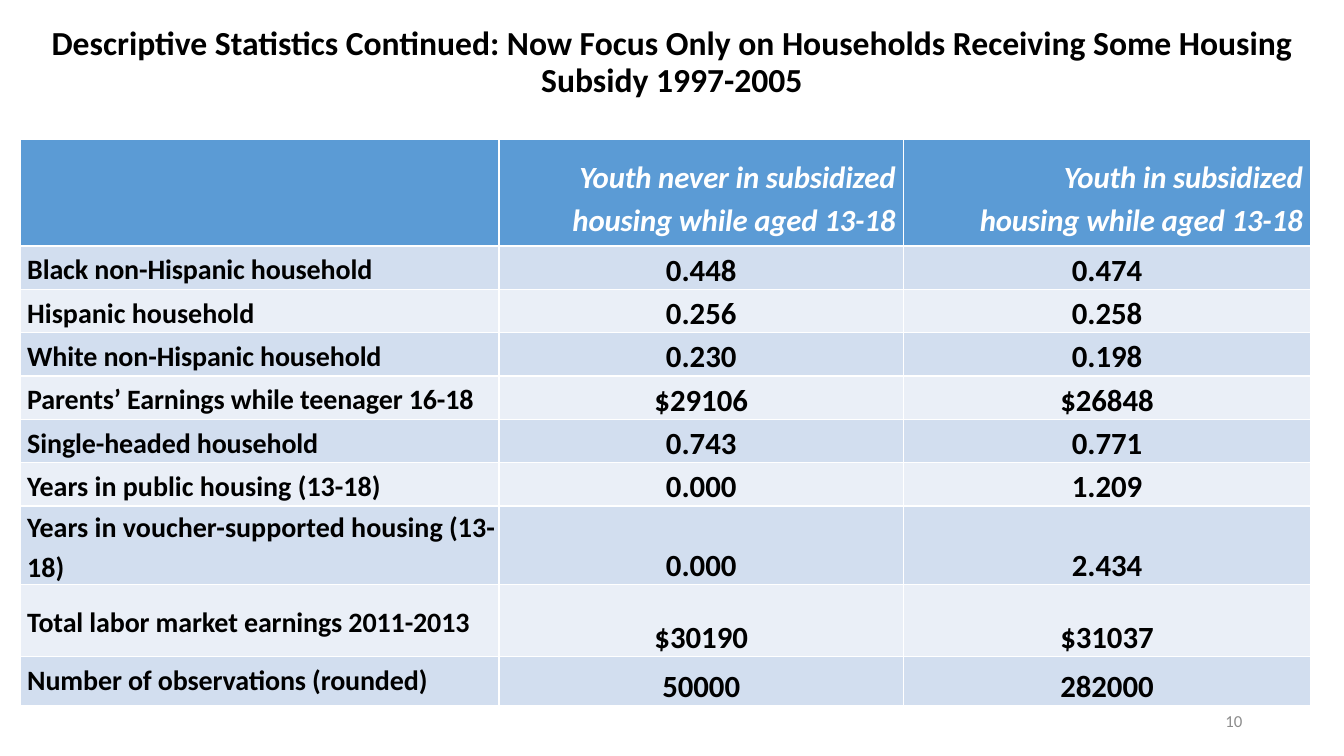
from pptx import Presentation
from pptx.dml.color import RGBColor
from pptx.enum.text import MSO_ANCHOR, PP_ALIGN
from pptx.util import Inches, Pt

TITLE = ("Descriptive Statistics Continued: Now Focus Only on Households "
         "Receiving Some Housing Subsidy 1997-2005")
HEADERS = ("", "Youth never in subsidized housing while aged 13-18",
           "Youth in subsidized housing while aged 13-18")
# label, never subsidized, subsidized, row height, label letter spacing, label line spacing
ROWS = [
    ("Black non-Hispanic household", "0.448", "0.474", 0.43, -10, 1.15),
    ("Hispanic household", "0.256", "0.258", 0.43, 0, 1.15),
    ("White non-Hispanic household", "0.230", "0.198", 0.43, -10, 1.15),
    ("Parents’ Earnings while teenager 16-18", "$29106", "$26848", 0.43, -10, 1.15),
    ("Single-headed household", "0.743", "0.771", 0.43, -10, 1.15),
    ("Years in public housing (13-18)", "0.000", "1.209", 0.43, 0, 1.15),
    ("Years in voucher-supported housing (13-18)", "0.000", "2.434", 0.71, 0, 1.15),
    ("Total labor market earnings 2011-2013", "$30190", "$31037", 0.71, -10, 1.15),
    ("Number of observations (rounded)", "50000", "282000", 0.49, -10, 0.99),
]
PAGE_NUMBER = "10"

FONT = "Calibri"
BLACK = RGBColor(0x00, 0x00, 0x00)
WHITE = RGBColor(0xFF, 0xFF, 0xFF)
GRAY = RGBColor(0x8C, 0x8C, 0x8C)
HEADER_BLUE = RGBColor(0x5B, 0x9B, 0xD5)
BANDS = (RGBColor(0xD2, 0xDE, 0xEF), RGBColor(0xEA, 0xEF, 0xF7))

COLUMN_WIDTHS = (4.75, 4.01, 4.04)
HEADER_HEIGHT = 1.06
TABLE_LEFT, TABLE_TOP = 0.2, 1.38


def write(text_frame, text, size, color, align, bold=True, italic=False, spacing=0):
    """Fill a text frame with one formatted paragraph and return the paragraph."""
    text_frame.text = text
    paragraph = text_frame.paragraphs[0]
    paragraph.alignment = align
    for run in paragraph.runs:
        run.font.name, run.font.size = FONT, Pt(size)
        run.font.bold, run.font.italic = bold, italic
        run.font.color.rgb = color
        if spacing:
            run.font._element.set("spc", str(spacing))
    return paragraph


def indent(paragraph, left, first_line=0):
    properties = paragraph._p.get_or_add_pPr()
    properties.set("marL", str(Inches(left)))
    properties.set("indent", str(Inches(first_line)))


def prepare(cell, color, anchor):
    cell.fill.solid()
    cell.fill.fore_color.rgb = color
    cell.vertical_anchor = anchor
    cell.margin_left = cell.margin_right = cell.margin_top = cell.margin_bottom = 0


def add_statistics_table(slide):
    heights = [HEADER_HEIGHT] + [row[3] for row in ROWS]
    table = slide.shapes.add_table(
        len(heights), len(COLUMN_WIDTHS), Inches(TABLE_LEFT), Inches(TABLE_TOP),
        Inches(sum(COLUMN_WIDTHS)), Inches(sum(heights))).table
    for column, width in zip(table.columns, COLUMN_WIDTHS):
        column.width = Inches(width)
    for row, height in zip(table.rows, heights):
        row.height = Inches(height)

    for column, header in enumerate(HEADERS):
        cell = table.cell(0, column)
        prepare(cell, HEADER_BLUE, MSO_ANCHOR.TOP)
        if header:
            cell.margin_top, cell.margin_right = Inches(0.14), Inches(0.08)
            paragraph = write(cell.text_frame, header, 22, WHITE, PP_ALIGN.RIGHT,
                              italic=True, spacing=-10)
            paragraph.line_spacing = 1.15
            indent(paragraph, 0.09, 0.64)

    for index, (label, never, subsidized, _, spacing, line_spacing) in enumerate(ROWS):
        band = BANDS[index % 2]
        cell = table.cell(index + 1, 0)
        prepare(cell, band, MSO_ANCHOR.MIDDLE)
        paragraph = write(cell.text_frame, label, 20, BLACK, PP_ALIGN.LEFT, spacing=spacing)
        paragraph.line_spacing = line_spacing
        indent(paragraph, 0.07)
        for column, value in enumerate((never, subsidized), start=1):
            cell = table.cell(index + 1, column)
            prepare(cell, band, MSO_ANCHOR.BOTTOM)
            write(cell.text_frame, value, 22, BLACK, PP_ALIGN.CENTER)


def main():
    presentation = Presentation()
    presentation.slide_width, presentation.slide_height = Inches(13.33), Inches(7.5)
    slide = presentation.slides.add_slide(presentation.slide_layouts[5])

    title = slide.shapes.title
    title.left, title.top = 0, 0
    title.width, title.height = presentation.slide_width, Inches(1.25)
    title.text_frame.vertical_anchor = MSO_ANCHOR.MIDDLE
    write(title.text_frame, TITLE, 24, BLACK, PP_ALIGN.CENTER).line_spacing = 0.9

    add_statistics_table(slide)

    number = slide.shapes.add_textbox(Inches(9.42), Inches(6.95), Inches(3), Inches(0.4))
    number.text_frame.word_wrap = True
    number.text_frame.vertical_anchor = MSO_ANCHOR.MIDDLE
    write(number.text_frame, PAGE_NUMBER, 12, GRAY, PP_ALIGN.RIGHT, bold=False)

    presentation.save("out.pptx")


if __name__ == "__main__":
    main()
